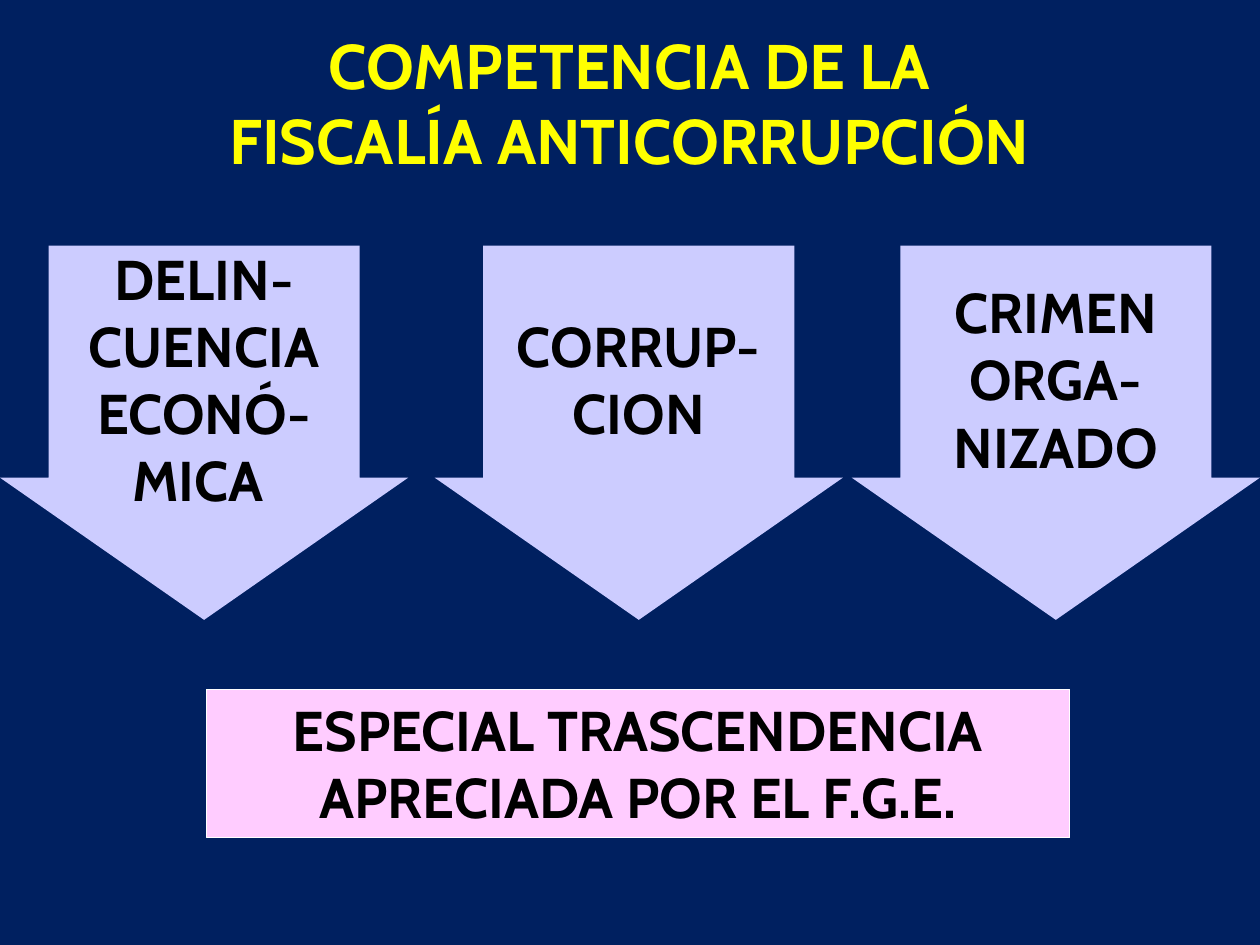
from dataclasses import dataclass

from pptx import Presentation
from pptx import util as u
from pptx.dml.color import RGBColor
from pptx.enum import shapes, text


@dataclass(frozen=True)
class Theme:
    font: str = "Cabin"
    background: str = "002060"
    arrow: str = "CCCCFF"
    box: str = "FFCCFF"
    box_line: str = "FFFFFF"
    title: str = "FFFF00"
    body: str = "000000"
    title_size: int = 36
    body_size: int = 32


THEME = Theme()
ARROW_TOP, ARROW_WIDTH, ARROW_HEIGHT = 140.4, 233.28, 213.84
SHAFT_SHARE, HEAD_SHARE = 0.762, 0.38
ARROWS = [
    (0, ["DELIN-", "CUENCIA", "ECONÓ-", "MICA "]),
    (248.4, ["CORRUP-", "CION"]),
    (486.72, ["CRIMEN", "ORGA-", "NIZADO"]),
]


def rgb(value):
    return RGBColor.from_string(value)


def points(*lengths):
    return [u.Pt(length) for length in lengths]


def set_text(sp, lines, size, color, wrap=True, anchor=text.MSO_ANCHOR.TOP):
    """Write one centred bold paragraph per line."""
    tf = sp.text_frame
    frame_format = {"word_wrap": wrap, "vertical_anchor": anchor}
    for name, value in frame_format.items():
        setattr(tf, name, value)
    run_format = {"name": THEME.font, "size": u.Pt(size), "bold": True}
    for i, line in enumerate(lines):
        p = tf.add_paragraph() if i else tf.paragraphs[0]
        p.alignment = text.PP_ALIGN.CENTER
        r = p.add_run()
        r.text = line
        for name, value in run_format.items():
            setattr(r.font, name, value)
        r.font.color.rgb = rgb(color)


def add_filled(s, kind, box, fill):
    sp = s.shapes.add_shape(kind, *points(*box))
    sp.shadow.inherit = False
    sp.fill.solid()
    sp.fill.fore_color.rgb = rgb(fill)
    sp.line.fill.background()
    return sp


def add_title(s, lines):
    sp = s.shapes.add_textbox(*points(44.64, 11.52, 630, 108.72))
    set_text(sp, lines, THEME.title_size, THEME.title)


def add_arrow(s, left, lines):
    box = (left, ARROW_TOP, ARROW_WIDTH, ARROW_HEIGHT)
    sp = add_filled(s, shapes.MSO_SHAPE.DOWN_ARROW, box, THEME.arrow)
    sp.adjustments[0] = SHAFT_SHARE
    sp.adjustments[1] = HEAD_SHARE
    set_text(sp, lines, THEME.body_size, THEME.body, wrap=False,
             anchor=text.MSO_ANCHOR.MIDDLE)


def add_conclusion(s, line):
    box = (118.08, 393.84, 493.2, 84.96)
    sp = add_filled(s, shapes.MSO_SHAPE.RECTANGLE, box, THEME.box)
    sp.line.color.rgb = rgb(THEME.box_line)
    sp.line.width = u.Pt(0.75)
    set_text(sp, [line], THEME.body_size, THEME.body)


def main():
    prs = Presentation()
    prs.slide_width, prs.slide_height = points(720, 540)
    s = prs.slides.add_slide(prs.slide_layouts[6])
    s.background.fill.solid()
    s.background.fill.fore_color.rgb = rgb(THEME.background)
    add_title(s, ["COMPETENCIA DE LA", "FISCALÍA ANTICORRUPCIÓN"])
    for left, lines in ARROWS:
        add_arrow(s, left, lines)
    add_conclusion(s, "ESPECIAL TRASCENDENCIA APRECIADA POR EL F.G.E.")
    prs.save("out.pptx")


if __name__ == "__main__":
    main()
